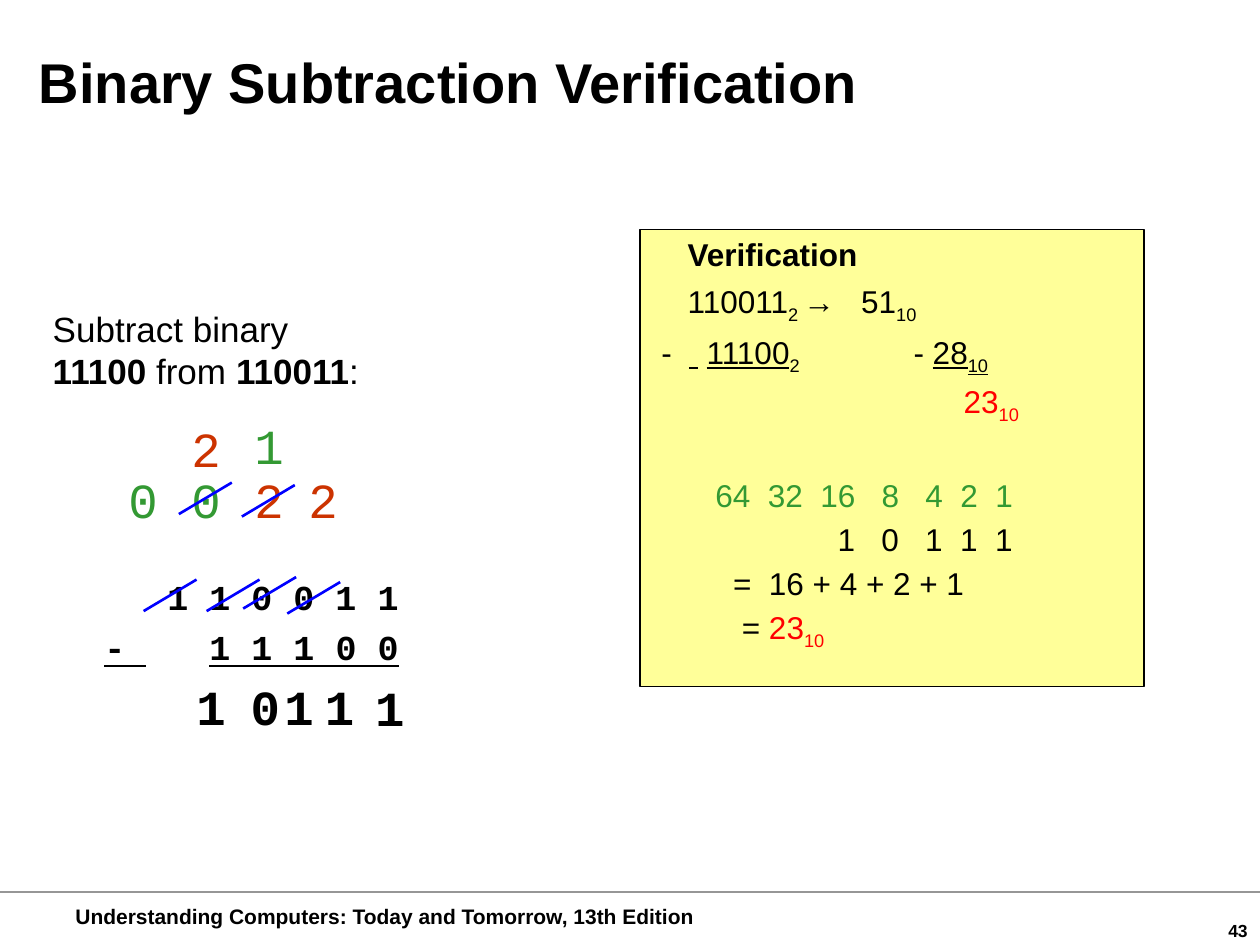
from dataclasses import dataclass

from lxml.etree import SubElement
from pptx import Presentation
from pptx.dml.color import RGBColor
from pptx.enum.shapes import MSO_CONNECTOR, MSO_SHAPE
from pptx.enum.text import MSO_ANCHOR, PP_ALIGN
from pptx.oxml.ns import qn
from pptx.util import Inches, Pt


@dataclass(frozen=True)
class Theme:
    sans: str = "Arial"
    mono: str = "Courier New"
    black: str = "000000"
    red: str = "FF0000"
    borrowed: str = "CC3300"
    green: str = "339933"
    strike: str = "0000FF"
    rule: str = "969696"
    panel: str = "FFFF99"
    title: int = 32
    digit: int = 28
    body: int = 20
    proof: int = 18
    footer: int = 12
    number: int = 10


T = Theme()


@dataclass(frozen=True)
class Run:
    text: str
    color: str = T.black
    bold: bool = False
    underline: bool = False
    sub: bool = False
    tracking: float = 0


@dataclass(frozen=True)
class Line:
    runs: tuple[Run, ...]
    indent: float = 0
    before: float = 0
    spacing: float | None = None
    align: PP_ALIGN = PP_ALIGN.LEFT


@dataclass(frozen=True)
class Digit:
    text: str
    x: float
    y: float
    color: str = T.black
    bold: bool = False


def gap(extra: float, **style) -> Run:
    """One space, widened by so many points."""
    return Run(" ", tracking=extra, **style)


def columns(*cells: tuple[str, float], color: str = T.black) -> tuple[Run, ...]:
    """Each number, followed by a space widened by its own extra points."""
    return tuple(r for text, extra in cells for r in (Run(text, color), gap(extra)))[:-1]


def write(tf, lines: list[Line], size: int, font: str = T.sans) -> None:
    for i, line in enumerate(lines):
        p = tf.paragraphs[0] if i == 0 else tf.add_paragraph()
        pPr = p._p.get_or_add_pPr()
        pPr.set("marL", str(Inches(line.indent)))
        pPr.set("indent", "0")
        p.alignment = line.align
        p.space_before = Pt(line.before)
        if line.spacing:
            p.line_spacing = line.spacing
        for run in line.runs:
            r = p.add_run()
            r.text = run.text
            r.font.name, r.font.size = font, Pt(size)
            r.font.bold, r.font.underline = run.bold, run.underline
            r.font.color.rgb = RGBColor.from_string(run.color)
            rPr = r._r.get_or_add_rPr()
            if run.sub:
                rPr.set("baseline", "-25000")
            if run.tracking:
                rPr.set("spc", str(round(run.tracking * 100)))


def add_text(s, box: tuple[float, ...], lines: list[Line], size: int,
             font: str = T.sans, wrap: bool = False, top: float = 0.05) -> None:
    tf = s.shapes.add_textbox(*map(Inches, box)).text_frame
    tf.word_wrap = wrap
    tf.margin_top = Inches(top)
    write(tf, lines, size, font)


def add_line(s, x1: float, y1: float, x2: float, y2: float, color: str, width: float) -> None:
    c = s.shapes.add_connector(MSO_CONNECTOR.STRAIGHT, *map(Inches, (x1, y1, x2, y2)))
    c.line.color.rgb = RGBColor.from_string(color)
    c.line.width = Pt(width)
    SubElement(c._element.spPr, qn("a:effectLst"))


def add_panel(s, box: tuple[float, ...], lines: list[Line]) -> None:
    sp = s.shapes.add_shape(MSO_SHAPE.RECTANGLE, *map(Inches, box))
    sp.shadow.inherit = False
    sp.fill.solid()
    sp.fill.fore_color.rgb = RGBColor.from_string(T.panel)
    sp.line.color.rgb = RGBColor.from_string(T.black)
    sp.line.width = Pt(0.75)
    tf = sp.text_frame
    tf.word_wrap = True
    tf.vertical_anchor = MSO_ANCHOR.TOP
    write(tf, lines, T.proof)


LEAD = 3.6  # points between the lines of the proof
PROOF = [
    Line((Run("Verification", bold=True),), indent=0.28),
    Line((Run("110011"), Run("2 ", sub=True), Run("→"), gap(10), Run("51"),
          Run("10", sub=True)), indent=0.28, before=LEAD, spacing=1.05),
    Line((Run("-"), gap(5), gap(5, underline=True), Run("11100", underline=True),
          Run("2", sub=True), gap(60), Run("- "), Run("28", underline=True),
          Run("10", underline=True, sub=True)), indent=0.07, before=LEAD, spacing=1.05),
    Line((Run("23", T.red), Run("10", T.red, sub=True)), indent=2.47, before=LEAD),
    Line(columns(("64", 5), ("32", 5), ("16", 10), ("8", 10), ("4", 5), ("2", 5), ("1", 0),
                 color=T.green), indent=0.5, before=28.8),
    Line(columns(("1", 10), ("0", 10), ("1", 5), ("1", 5), ("1", 0)), indent=1.47, before=LEAD),
    Line((Run("="), gap(5), Run("16 + 4 + 2 + 1")), indent=0.64, before=LEAD),
    Line((Run("= "), Run("23", T.red), Run("10", T.red, sub=True)), indent=0.71, before=LEAD),
]

INTRO = [
    Line((Run("Subtract binary"),)),
    Line((Run("11100", bold=True), Run(" from "), Run("110011", bold=True), Run(":"))),
]

PROBLEM = [
    Line((Run("1 1 0 0 1 1", bold=True),), indent=0.5),
    Line((Run("-", bold=True, underline=True), gap(36, bold=True, underline=True),
          Run("1 1 1 0 0", bold=True, underline=True)), before=4.5),
]

DIGITS = [
    Digit("2", 1.42, 3.27, T.borrowed),
    Digit("1", 1.92, 3.25, T.green),
    Digit("0", 0.92, 3.68, T.green),
    Digit("0", 1.42, 3.68, T.green),
    Digit("2", 1.92, 3.68, T.borrowed),
    Digit("2", 2.35, 3.68, T.borrowed),
    Digit("1", 1.46, 5.32, bold=True),
    Digit("0", 1.89, 5.32, bold=True),
    Digit("1", 2.16, 5.32, bold=True),
    Digit("1", 2.48, 5.32, bold=True),
    Digit("1", 2.88, 5.33, bold=True),
]

# Lower left end of each strike through a borrowed-from digit
STRIKES = [(1.42, 4.08), (1.92, 4.1), (1.14, 4.85), (1.64, 4.85), (1.93, 4.83), (2.28, 4.87)]


def main() -> None:
    prs = Presentation()
    prs.slide_width, prs.slide_height = Inches(10), Inches(7.5)
    s = prs.slides.add_slide(prs.slide_layouts[6])

    add_line(s, 0, 7.08, 10, 7.08, T.rule, 0.75)
    add_text(s, (0.5, 7.12, 5.15, 0.3), [Line((Run(
        "Understanding Computers: Today and Tomorrow, 13th Edition", bold=True),))], T.footer)
    add_text(s, (7.92, 7.25, 2.08, 0.25),
             [Line((Run("43", bold=True),), align=PP_ALIGN.RIGHT)], T.number, wrap=True)
    add_text(s, (0.17, 0, 6.78, 0.75),
             [Line((Run("Binary Subtraction Verification", bold=True),), align=PP_ALIGN.CENTER)],
             T.title, wrap=True, top=0.38)

    add_panel(s, (5.08, 1.82, 4, 3.63), PROOF)
    add_text(s, (0.32, 2.39, 2.68, 0.77), INTRO, T.body)
    add_text(s, (0.73, 4.52, 3.6, 1.36), PROBLEM, T.body, T.mono, wrap=True)
    for d in DIGITS:
        add_text(s, (d.x, d.y, 0.43, 0.57), [Line((Run(d.text, d.color, d.bold),))],
                 T.digit, T.mono)
    for x, y in STRIKES:
        add_line(s, x, y, x + 0.42, y - 0.25, T.strike, 1.5)

    prs.save("out.pptx")


if __name__ == "__main__":
    main()
